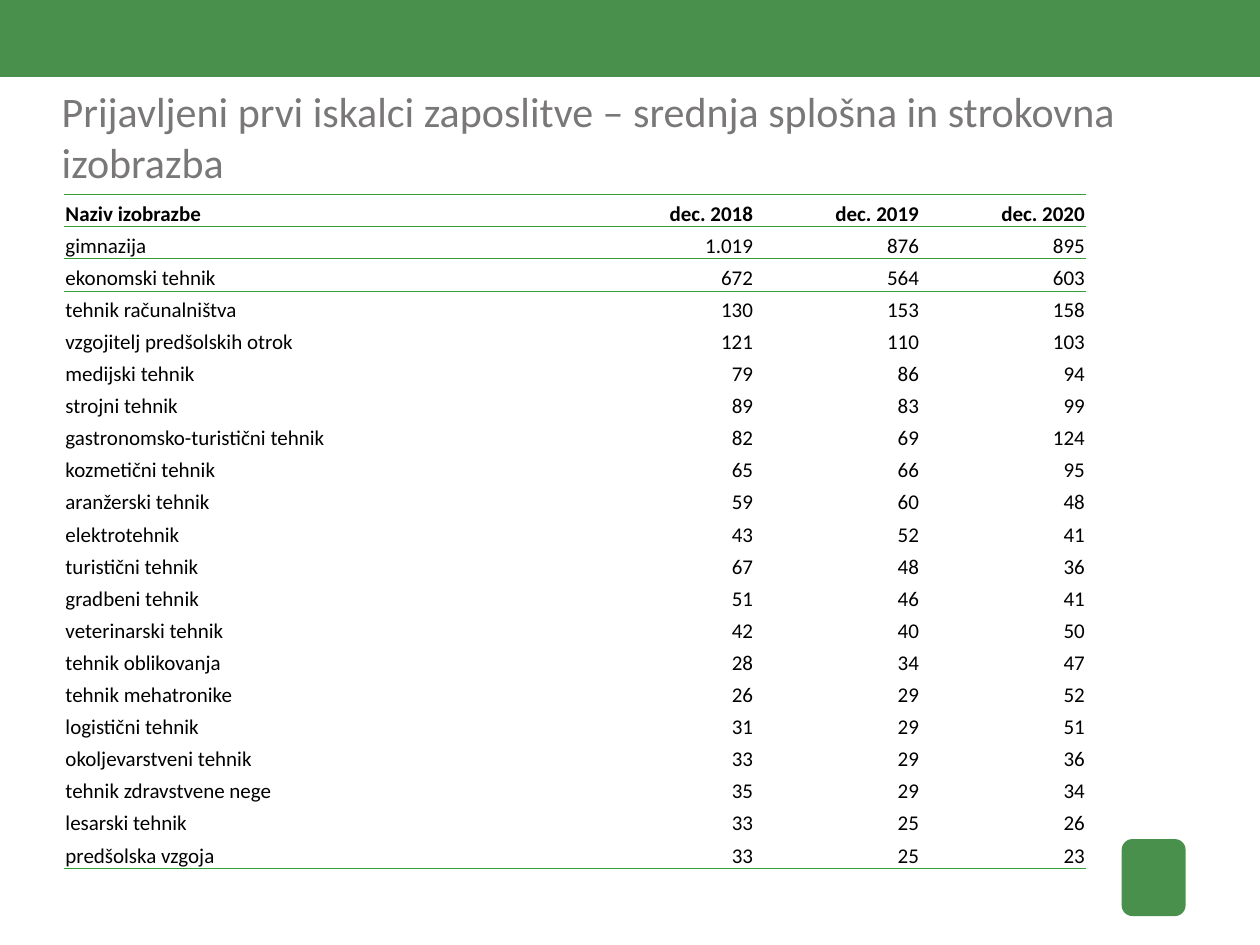
from typing import NamedTuple

from pptx import Presentation
from pptx.dml.color import RGBColor
from pptx.enum.shapes import MSO_SHAPE as Kind
from pptx.enum.text import MSO_ANCHOR as Anchor, PP_ALIGN as Align
from pptx.oxml import parse_xml
from pptx.oxml.ns import nsdecls
from pptx.util import Pt

GREEN = RGBColor(0x49, 0x90, 0x4D)
RULE = RGBColor(0x33, 0x9E, 0x35)
GREY = RGBColor(0x79, 0x77, 0x77)
BLACK = RGBColor(0, 0, 0)
FONT = "Calibri"
PLAIN = "{2D5ABB26-0587-4C30-8999-92F81FD0307C}"  # table style without grid


class Box(NamedTuple):
    left: float
    top: float
    width: float
    height: float

    def pts(self) -> list:
        return [Pt(v) for v in self]


class Row(NamedTuple):
    name: str
    first: str
    second: str
    third: str


BAND = Box(0, -0.72, 720, 44.64)
MARK = Box(641, 479.5, 36.5, 44)
TITLE = Box(35.28, 48.96, 666.72, 56.88)
TABLE = Box(36.72, 111.24, 583.92, 385.2)
COLS = (299.52, 94.8, 94.8, 94.8)

ROWS = [
    Row("Naziv izobrazbe", "dec. 2018", "dec. 2019", "dec. 2020"),
    Row("gimnazija", "1.019", "876", "895"),
    Row("ekonomski tehnik", "672", "564", "603"),
    Row("tehnik računalništva", "130", "153", "158"),
    Row("vzgojitelj predšolskih otrok", "121", "110", "103"),
    Row("medijski tehnik", "79", "86", "94"),
    Row("strojni tehnik", "89", "83", "99"),
    Row("gastronomsko-turistični tehnik", "82", "69", "124"),
    Row("kozmetični tehnik", "65", "66", "95"),
    Row("aranžerski tehnik", "59", "60", "48"),
    Row("elektrotehnik", "43", "52", "41"),
    Row("turistični tehnik", "67", "48", "36"),
    Row("gradbeni tehnik", "51", "46", "41"),
    Row("veterinarski tehnik", "42", "40", "50"),
    Row("tehnik oblikovanja", "28", "34", "47"),
    Row("tehnik mehatronike", "26", "29", "52"),
    Row("logistični tehnik", "31", "29", "51"),
    Row("okoljevarstveni tehnik", "33", "29", "36"),
    Row("tehnik zdravstvene nege", "35", "29", "34"),
    Row("lesarski tehnik", "33", "25", "26"),
    Row("predšolska vzgoja", "33", "25", "23"),
]


def write(frame, text: str, *, size: float = 12, color: RGBColor = BLACK,
          bold: bool = False, align: Align = Align.LEFT) -> None:
    para = frame.paragraphs[0]
    para.alignment = align
    run = para.add_run()
    run.text = text
    font = run.font
    font.name, font.size, font.bold = FONT, Pt(size), bold
    font.color.rgb = color


def draw(slide, kind: Kind, box: Box) -> None:
    shape = slide.shapes.add_shape(kind, *box.pts())
    shape.shadow.inherit = False
    shape.fill.solid()
    shape.fill.fore_color.rgb = GREEN
    shape.line.fill.background()


def rule(cell, sides: str) -> None:
    """Add thin green borders on the given sides, in schema order T, B."""
    props = cell._tc.get_or_add_tcPr()
    for at, side in enumerate(sides):
        props.insert(at, parse_xml(
            f'<a:ln{side} {nsdecls("a")} w="{Pt(0.5)}"><a:solidFill>'
            f'<a:srgbClr val="{RULE}"/></a:solidFill></a:ln{side}>'))


def borders(row: int) -> str:
    if row < 2:
        return "TB"
    if row == 2:
        return "T"
    return "B" if row == len(ROWS) - 1 else ""


def add_grid(slide) -> None:
    frame = slide.shapes.add_table(len(ROWS), len(COLS), *TABLE.pts())
    frame._element.xpath(".//a:tableStyleId")[0].text = PLAIN
    table = frame.table
    table.first_row = table.horz_banding = False
    for col, width in zip(table.columns, COLS):
        col.width = Pt(width)
    for r, row in enumerate(ROWS):
        table.rows[r].height = Pt(TABLE.height / len(ROWS))
        for c, text in enumerate(row):
            cell = table.cell(r, c)
            cell.margin_left = cell.margin_right = cell.margin_top = Pt(0.72)
            cell.margin_bottom = 0
            cell.vertical_anchor = Anchor.BOTTOM
            cell.fill.background()
            rule(cell, borders(r))
            write(cell.text_frame, text, bold=r == 0,
                  align=Align.RIGHT if c else Align.LEFT)


def main() -> None:
    deck = Presentation()
    deck.slide_width, deck.slide_height = Pt(720), Pt(540)
    slide = deck.slides.add_slide(deck.slide_layouts[6])

    # Top band and corner mark
    draw(slide, Kind.RECTANGLE, BAND)
    draw(slide, Kind.ROUNDED_RECTANGLE, MARK)

    # Title
    frame = slide.shapes.add_textbox(*TITLE.pts()).text_frame
    frame.word_wrap = True
    frame.margin_left = frame.margin_right = 0
    frame.margin_top = frame.margin_bottom = 0
    write(frame, "Prijavljeni prvi iskalci zaposlitve – srednja splošna "
          "in strokovna izobrazba", size=24, color=GREY)

    # Table of job seekers
    add_grid(slide)
    deck.save("out.pptx")


if __name__ == "__main__":
    main()
